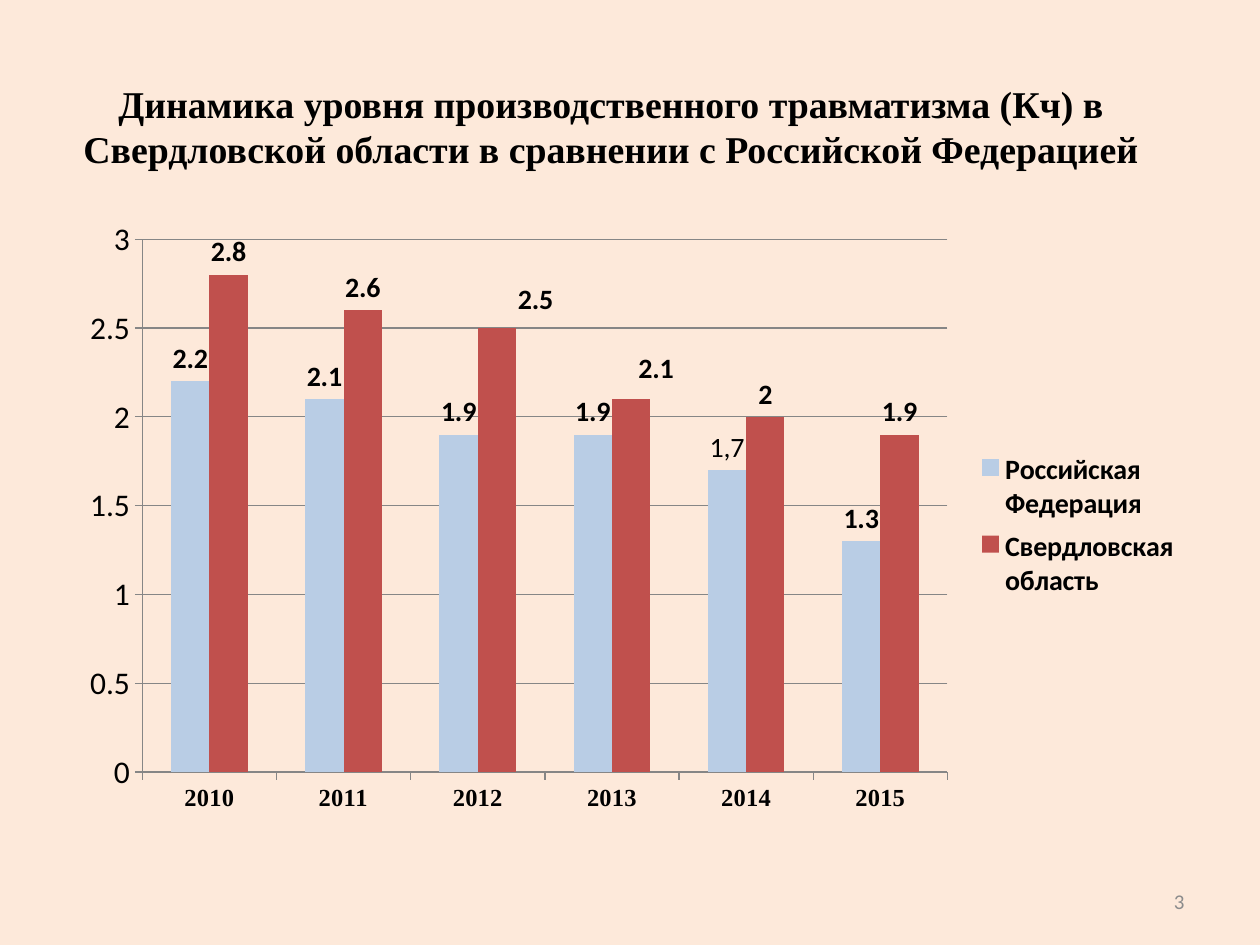
import lxml.etree
import pptx
import pptx.chart.data
import pptx.dml.color
import pptx.enum.chart
import pptx.enum.text
import pptx.oxml.ns
import pptx.util

COLORS = {
    "background": "FDE9DA",
    "text": "000000",
    "number": "8C8C8C",
    "grid": "868686",
    "russia": "B9CDE5",
    "region": "C0504D",
}


def format_font(font, color="text", **values):
    for name, value in values.items():
        setattr(font, name, value)
    font.color.rgb = pptx.dml.color.RGBColor.from_string(COLORS[color])


def set_layout(parent, index, values):
    """Insert a manual chart layout; values maps tags to settings in schema order."""
    qualified = pptx.oxml.ns.qn
    for old_layout in parent.findall(qualified("c:layout")):
        parent.remove(old_layout)
    layout = parent.makeelement(qualified("c:layout"), {})
    manual = lxml.etree.SubElement(layout, qualified("c:manualLayout"))
    for tag, value in values.items():
        lxml.etree.SubElement(manual, qualified("c:" + tag)).set("val", str(value))
    parent.insert(index, layout)


presentation = pptx.Presentation()
presentation.slide_width = pptx.util.Inches(10)
presentation.slide_height = pptx.util.Inches(7.5)
width, height = presentation.slide_width, presentation.slide_height
slide = presentation.slides.add_slide(presentation.slide_layouts[5])
slide.background.fill.solid()
slide.background.fill.fore_color.rgb = pptx.dml.color.RGBColor.from_string(COLORS["background"])

# Title
title = slide.shapes.title
title.left, title.top = int(width * 0.035), int(height * 0.05)
title.width, title.height = int(width * 0.9), int(height / 6)
title.text_frame.text = (
    "Динамика уровня производственного травматизма (Кч) в "
    "Свердловской области в сравнении с Российской Федерацией"
)
title.text_frame.word_wrap = True
title.text_frame.vertical_anchor = pptx.enum.text.MSO_ANCHOR.MIDDLE
paragraph = title.text_frame.paragraphs[0]
paragraph.alignment = pptx.enum.text.PP_ALIGN.CENTER
format_font(paragraph.runs[0].font, name="Times New Roman", size=pptx.util.Pt(21.6), bold=True)

# Injury rate chart
chart_data = pptx.chart.data.CategoryChartData()
chart_data.categories = [str(year) for year in range(2010, 2016)]
chart_data.add_series("Российская Федерация", (2.2, 2.1, 1.9, 1.9, 1.7, 1.3))
chart_data.add_series("Свердловская область", (2.8, 2.6, 2.5, 2.1, 2, 1.9))
chart = slide.shapes.add_chart(
    pptx.enum.chart.XL_CHART_TYPE.COLUMN_CLUSTERED,
    int(width * 0.05), int(height * 0.233), int(width * 0.9), int(height * 0.66),
    chart_data,
).chart
chart.has_title = False
format_font(chart.font, name="Calibri", size=pptx.util.Pt(18))
set_layout(chart.plots[0]._element.getparent(), 0, {
    "layoutTarget": "inner", "xMode": "edge", "yMode": "edge",
    "x": 0.07, "y": 0.03, "w": 0.71, "h": 0.855,
})

# Axes
value_axis, category_axis = chart.value_axis, chart.category_axis
value_axis.minimum_scale, value_axis.maximum_scale, value_axis.major_unit = 0, 3, 0.5
value_axis.has_major_gridlines = True
for line in (value_axis.format.line, category_axis.format.line, value_axis.major_gridlines.format.line):
    line.color.rgb = pptx.dml.color.RGBColor.from_string(COLORS["grid"])
    line.width = pptx.util.Pt(0.75)
for axis in (value_axis, category_axis):
    axis.major_tick_mark = pptx.enum.chart.XL_TICK_MARK.OUTSIDE
format_font(value_axis.tick_labels.font, name="Calibri", size=pptx.util.Pt(18))
format_font(category_axis.tick_labels.font, name="Times New Roman", size=pptx.util.Pt(14), bold=True)

# Legend, narrow enough to wrap beside the columns
chart.has_legend = True
chart.legend.position = pptx.enum.chart.XL_LEGEND_POSITION.RIGHT
chart.legend.include_in_layout = False
label_format = {"name": "Calibri", "size": pptx.util.Pt(16), "bold": True}
format_font(chart.legend.font, **label_format)
set_layout(chart.legend._element, 1, {
    "xMode": "edge", "yMode": "edge", "x": 0.8, "y": 0.36, "w": 0.19, "h": 0.26,
})

# Columns with value labels
plot = chart.plots[0]
plot.gap_width, plot.overlap, plot.vary_by_categories = 150, 0, False
outside = pptx.enum.chart.XL_LABEL_POSITION.OUTSIDE_END
for series, color in zip(plot.series, ("russia", "region")):
    series.format.fill.solid()
    series.format.fill.fore_color.rgb = pptx.dml.color.RGBColor.from_string(COLORS[color])
    series.data_labels.show_value = True
    series.data_labels.position = outside
    format_font(series.data_labels.font, **label_format)
    for leader_lines in series.data_labels._element.findall(pptx.oxml.ns.qn("c:showLeaderLines")):
        leader_lines.set("val", "0")

# Custom wording for Russia in 2014
label = plot.series[0].points[4].data_label
label.text_frame.text = "1,7"
label.position = outside
format_font(label.text_frame.paragraphs[0].runs[0].font, **{**label_format, "bold": False})

# Shifted labels for the region in 2012 and 2013
for point_index, shift in {2: (0.034, -0.01), 3: (0.022, -0.013)}.items():
    label = plot.series[1].points[point_index].data_label
    format_font(label.font, **label_format)
    label.position = outside
    label_element = label._get_or_add_dLbl()
    set_layout(label_element, 1, dict(zip(("x", "y"), shift)))

# Slide number
number_box = slide.shapes.add_textbox(
    int(width * 0.717), int(height * 0.927), int(width * 0.233), int(height * 0.053))
number_box.text_frame.word_wrap = True
number_box.text_frame.vertical_anchor = pptx.enum.text.MSO_ANCHOR.MIDDLE
paragraph = number_box.text_frame.paragraphs[0]
paragraph.text = "3"
paragraph.alignment = pptx.enum.text.PP_ALIGN.RIGHT
format_font(paragraph.runs[0].font, "number", name="Calibri", size=pptx.util.Pt(12))

presentation.save("out.pptx")
